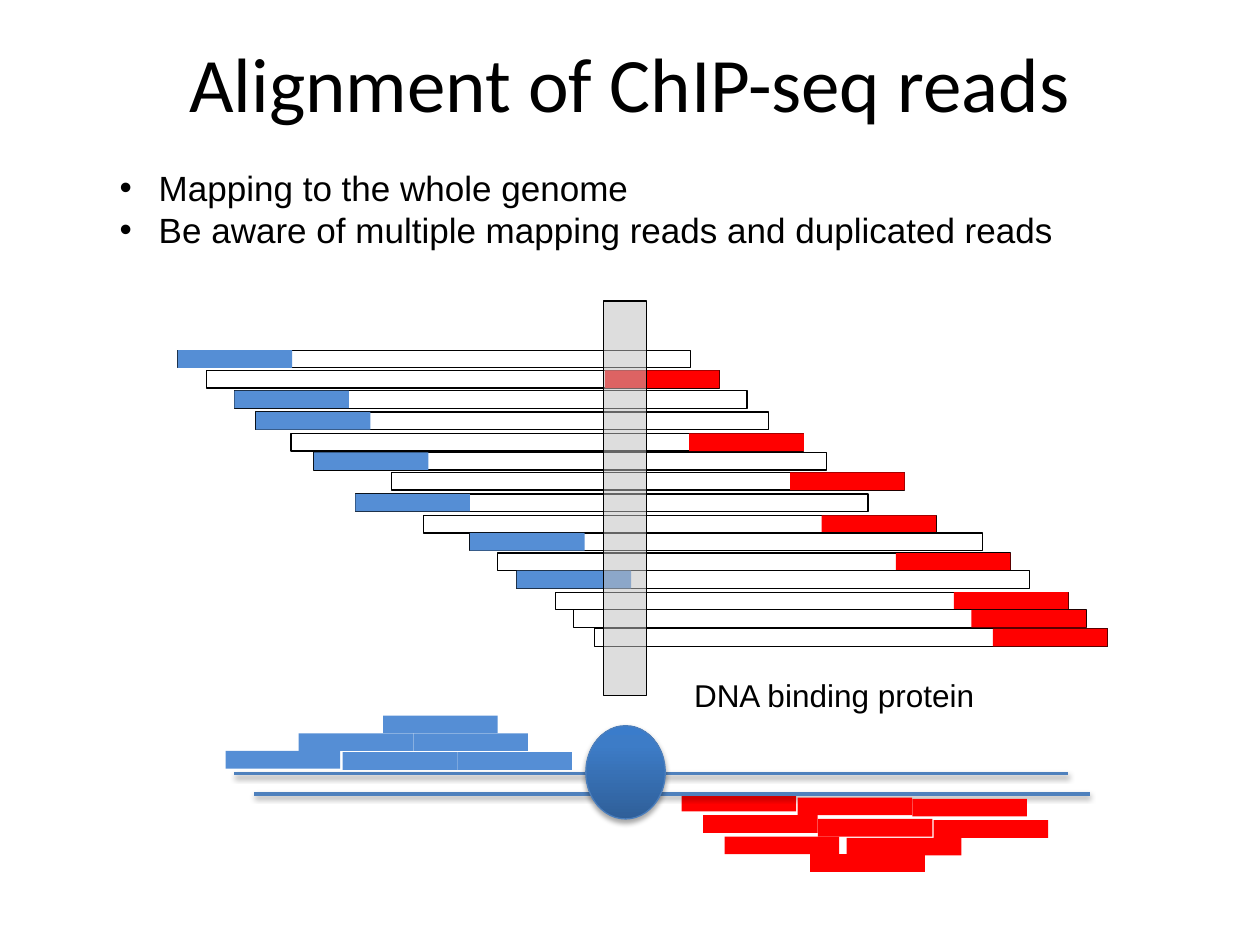
from dataclasses import dataclass
from typing import Optional

from lxml.etree import SubElement
from pptx import Presentation
from pptx.dml.color import RGBColor
from pptx.enum.shapes import MSO_CONNECTOR as Connector, MSO_SHAPE as Shape
from pptx.enum.text import MSO_ANCHOR as Anchor, MSO_AUTO_SIZE as AutoSize, PP_ALIGN as Align
from pptx.oxml import parse_xml
from pptx.oxml.ns import nsdecls, qn
from pptx.util import Inches, Pt

BLACK = RGBColor(0x00, 0x00, 0x00)
WHITE = RGBColor(0xFF, 0xFF, 0xFF)
BLUE = RGBColor(0x55, 0x8E, 0xD5)
RED = RGBColor(0xFF, 0x00, 0x00)
GREY = RGBColor(0xBF, 0xBF, 0xBF)
STRAND_BLUE = RGBColor(0x4F, 0x81, 0xBD)
PROTEIN_LINE = RGBColor(0x4B, 0x7E, 0xBC)
PROTEIN_STOPS = (
    (0, RGBColor(0x2F, 0x5F, 0x99)),
    (80, RGBColor(0x3D, 0x7C, 0xC7)),
    (100, RGBColor(0x3A, 0x7C, 0xCB)),
)

SLIDE_WIDTH, SLIDE_HEIGHT = Inches(10), Inches(7.5)
COLUMNS, ROWS = 100, 75
FRAGMENT_COLUMNS, READ_COLUMNS, READ_ROWS = 40.7, 9.1, 1.4


@dataclass(frozen=True)
class Box:
    column: float
    row: float
    columns: float
    rows: float

    def lengths(self) -> tuple:
        return (across(self.column), down(self.row), across(self.columns), down(self.rows))


@dataclass(frozen=True)
class Fragment:
    column: float
    row: float
    color: RGBColor


@dataclass(frozen=True)
class Strand:
    column: float
    row: float
    columns: float


FRAGMENTS = (
    Fragment(14.1, 27.8, BLUE), Fragment(16.4, 29.4, RED), Fragment(18.6, 31, BLUE),
    Fragment(20.3, 32.7, BLUE), Fragment(23.1, 34.4, RED), Fragment(24.9, 35.9, BLUE),
    Fragment(31.1, 37.5, RED), Fragment(28.2, 39.2, BLUE), Fragment(33.6, 40.9, RED),
    Fragment(37.3, 42.3, BLUE), Fragment(39.5, 43.9, RED), Fragment(41, 45.3, BLUE),
    Fragment(44.1, 47, RED), Fragment(45.5, 48.4, RED), Fragment(47.2, 49.9, RED),
)
READ_BEHIND_STRAND = (54.1, 63)
REVERSE_READS = (
    (55.8, 64.7), (57.5, 66.4), (67.2, 66.5), (64.3, 67.8),
    (63.3, 63.3), (64.9, 65), (72.4, 63.4), (74.1, 65.1),
)
FORWARD_READS = (
    (32.8, 58.2), (17.9, 59.6), (36.3, 59.7), (27.2, 59.7), (23.7, 58.2), (30.4, 56.8),
)
STRANDS = (Strand(18.6, 61.4, 66.2), Strand(20.2, 63, 66.3))


def across(columns: float) -> int:
    return round(SLIDE_WIDTH * columns / COLUMNS)


def down(rows: float) -> int:
    return round(SLIDE_HEIGHT * rows / ROWS)


def place(shape, box: Box) -> None:
    shape.left, shape.top, shape.width, shape.height = box.lengths()


def write_text(frame, *lines: str, size: float, font: str = "Arial",
               align: Align = Align.LEFT, indent: float = 0, wrap: bool = True) -> None:
    frame.text = "\n".join(lines)
    frame.word_wrap = wrap
    for paragraph in frame.paragraphs:
        paragraph.alignment = align
        paragraph.space_before = Pt(0)
        paragraph.font.size = Pt(size)
        paragraph.font.name = font
        paragraph.font.color.rgb = BLACK
        if indent:
            properties = paragraph._p.get_or_add_pPr()
            properties.set("marL", str(Inches(indent)))
            properties.set("indent", str(-Inches(indent)))
            SubElement(properties, qn("a:buChar"), char="•")


def add_figure(slide, kind: Shape, box: Box, fill: RGBColor,
               line: Optional[RGBColor] = None):
    shape = slide.shapes.add_shape(kind, *box.lengths())
    shape.shadow.inherit = False
    shape.fill.solid()
    shape.fill.fore_color.rgb = fill
    if line is None:
        shape.line.fill.background()
    else:
        shape.line.color.rgb = line
        shape.line.width = Pt(0.75)
    return shape


def add_read(slide, column: float, row: float, color: RGBColor) -> None:
    add_figure(slide, Shape.RECTANGLE, Box(column, row, READ_COLUMNS, READ_ROWS), color)


def add_fragment(slide, fragment: Fragment) -> None:
    box = Box(fragment.column, fragment.row, FRAGMENT_COLUMNS, READ_ROWS)
    add_figure(slide, Shape.RECTANGLE, box, WHITE, BLACK)
    shift = FRAGMENT_COLUMNS - READ_COLUMNS if fragment.color == RED else 0
    add_read(slide, fragment.column + shift, fragment.row, fragment.color)


def add_shadow(shape, distance: float, opacity: int) -> None:
    properties = shape._element.spPr
    effects = properties.find(qn("a:effectLst"))
    if effects is None:
        effects = SubElement(properties, qn("a:effectLst"))
    shadow = SubElement(effects, qn("a:outerShdw"), blurRad=str(Pt(3.1)),
                        dist=str(Pt(distance)), dir="5400000", rotWithShape="0")
    color = SubElement(shadow, qn("a:srgbClr"), val=str(BLACK))
    SubElement(color, qn("a:alpha"), val=str(opacity * 1000))


def add_strand(slide, strand: Strand) -> None:
    left, top = across(strand.column), down(strand.row)
    connector = slide.shapes.add_connector(
        Connector.STRAIGHT, left, top, left + across(strand.columns), top)
    connector.line.color.rgb = STRAND_BLUE
    connector.line.width = Pt(2)
    add_shadow(connector, 1.6, 38)


def add_binding_site(slide) -> None:
    site = add_figure(slide, Shape.RECTANGLE, Box(47.9, 23.9, 3.4, 31.3), GREY, BLACK)
    color = site._element.spPr.find(qn("a:solidFill"))[0]
    SubElement(color, qn("a:alpha"), val="52000")


def add_protein(slide) -> None:
    protein = add_figure(slide, Shape.OVAL, Box(46.5, 57.6, 6.3, 7.4),
                         STRAND_BLUE, PROTEIN_LINE)
    stops = "".join(f'<a:gs pos="{position * 1000}"><a:srgbClr val="{color}"/></a:gs>'
                    for position, color in PROTEIN_STOPS)
    gradient = parse_xml(f'<a:gradFill {nsdecls("a")}><a:gsLst>{stops}</a:gsLst>'
                         '<a:lin ang="16200000" scaled="0"/></a:gradFill>')
    properties = protein._element.spPr
    properties.replace(properties.find(qn("a:solidFill")), gradient)
    add_shadow(protein, 1.8, 35)


def main() -> None:
    presentation = Presentation()
    presentation.slide_width, presentation.slide_height = SLIDE_WIDTH, SLIDE_HEIGHT
    slide = presentation.slides.add_slide(presentation.slide_layouts[1])
    title, body = slide.placeholders

    place(title, Box(5, 0.2, 90, 12.5))
    frame = title.text_frame
    frame.margin_left = frame.margin_right = frame.margin_top = frame.margin_bottom = 0
    frame.vertical_anchor = Anchor.MIDDLE
    write_text(frame, "Alignment of ChIP-seq reads", size=44, font="Calibri",
               align=Align.CENTER, wrap=False)

    place(body, Box(8.5, 12.7, 86.5, 7.7))
    body.text_frame.auto_size = AutoSize.SHAPE_TO_FIT_TEXT
    write_text(body.text_frame, "Mapping to the whole genome",
               "Be aware of multiple mapping reads and duplicated reads",
               size=20, indent=0.31)

    for fragment in FRAGMENTS:
        add_fragment(slide, fragment)
    add_binding_site(slide)

    add_read(slide, *READ_BEHIND_STRAND, RED)
    for strand in STRANDS:
        add_strand(slide, strand)
    add_protein(slide)
    for reads, color in ((REVERSE_READS, RED), (FORWARD_READS, BLUE)):
        for column, row in reads:
            add_read(slide, column, row, color)

    label = slide.shapes.add_textbox(*Box(54.1, 53.2, 24.5, 4).lengths())
    label.text_frame.auto_size = AutoSize.SHAPE_TO_FIT_TEXT
    write_text(label.text_frame, "DNA binding protein", size=18, wrap=False)

    presentation.save("out.pptx")


if __name__ == "__main__":
    main()
